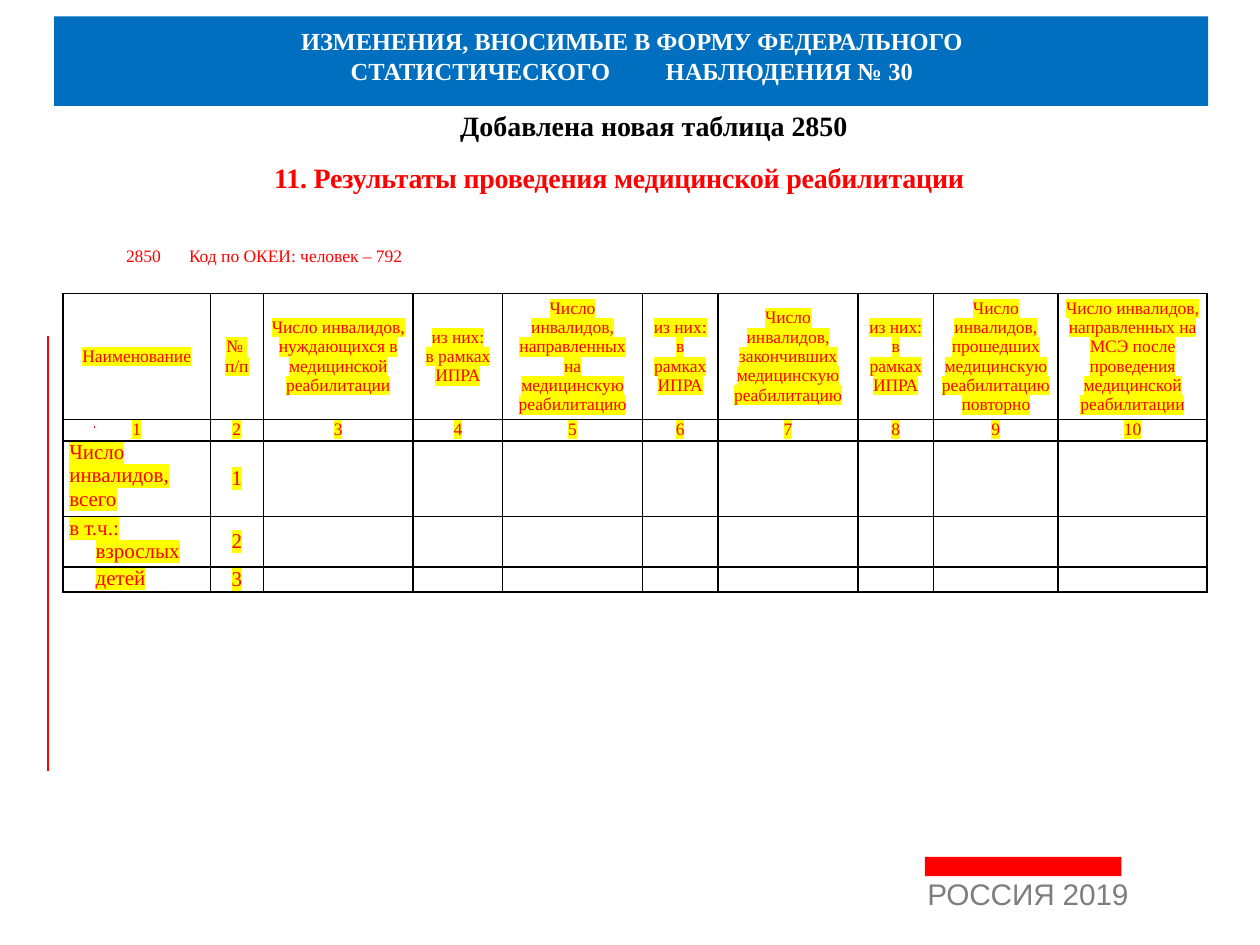
from lxml.etree import SubElement
from pptx import Presentation
from pptx.dml.color import RGBColor
from pptx.enum.shapes import MSO_CONNECTOR, MSO_SHAPE
from pptx.enum.text import MSO_ANCHOR, MSO_AUTO_SIZE, PP_ALIGN
from pptx.oxml.ns import qn
from pptx.util import Inches, Pt

RED, YELLOW, BLUE, WHITE, BLACK, GREY = "FF0000", "FFFF00", "006FC0", "FFFFFF", "000000", "7E7E7E"
SERIF, SANS = "Times New Roman", "Arial"
CENTER, LEFT = PP_ALIGN.CENTER, PP_ALIGN.LEFT


def rgb(hex_color):
    return RGBColor.from_string(hex_color)


def grid(*cells):
    """Convert steps of a 100 x 75 grid over the slide to lengths."""
    return [Inches(cell / 10) for cell in cells]


def write(paragraph, text, size=10, color=RED, font=SERIF, bold=False, align=CENTER, before=0,
          indent=0, tabs=(), spacing=0, line_height=None, highlight=None):
    """Fill one paragraph; indent and tabs are in grid steps."""
    paragraph.alignment, paragraph.space_before = align, Pt(before)
    if line_height:
        paragraph.line_spacing = Pt(line_height)
    properties = paragraph._p.get_or_add_pPr()
    properties.set("marL", str(grid(indent)[0]))
    properties.set("indent", "0")
    if tabs:
        tab_list = SubElement(properties, qn("a:tabLst"))
        for position, side in tabs:
            SubElement(tab_list, qn("a:tab"), pos=str(grid(position)[0]), algn=side)
    run = paragraph.add_run()
    run.text = text
    run.font.size, run.font.bold, run.font.name = Pt(size), bold, font
    run.font.color.rgb = rgb(color)
    run_properties = run._r.get_or_add_rPr()
    if spacing:
        run_properties.set("spc", str(int(spacing * 100)))
    if highlight:
        mark = SubElement(run_properties, qn("a:highlight"))
        SubElement(mark, qn("a:srgbClr"), val=highlight)
        run_properties.find(qn("a:solidFill")).addnext(mark)


class SlideBuilder:
    def __init__(self, presentation):
        self.slide = presentation.slides.add_slide(presentation.slide_layouts[5])
        self.shapes = self.slide.shapes

    def bar(self, place, color):
        band = self.shapes.add_shape(MSO_SHAPE.RECTANGLE, *grid(*place))
        band.shadow.inherit = False
        band.fill.solid()
        band.fill.fore_color.rgb = rgb(color)
        band.line.fill.background()

    def rule(self, x, top, bottom, color=RED, width=0.87):
        mark = self.shapes.add_connector(MSO_CONNECTOR.STRAIGHT, *grid(x, top, x, bottom))
        mark.line.color.rgb, mark.line.width = rgb(color), Pt(width)
        SubElement(mark._element.spPr, qn("a:effectLst"))

    def fill_frame(self, frame, paragraphs, **style):
        for index, (text, own_style) in enumerate(paragraphs):
            paragraph = frame.add_paragraph() if index else frame.paragraphs[0]
            write(paragraph, text, **{**style, **own_style})

    def set_frame(self, frame, paragraphs, style):
        frame.word_wrap, frame.auto_size = True, MSO_AUTO_SIZE.NONE
        frame.vertical_anchor = MSO_ANCHOR.TOP
        frame.margin_left = frame.margin_right = frame.margin_bottom = 0
        frame.margin_top = Inches(0.01)
        self.fill_frame(frame, paragraphs, **style)

    def title(self, place, paragraphs, **style):
        heading = self.shapes.title
        heading.left, heading.top, heading.width, heading.height = grid(*place)
        self.set_frame(heading.text_frame, paragraphs, style)
        # Bring the title in front of its band
        self.shapes._spTree.append(heading._element)

    def text(self, place, paragraphs, **style):
        self.set_frame(self.shapes.add_textbox(*grid(*place)).text_frame, paragraphs, style)

    def cell(self, cell, paragraphs, anchor):
        cell.margin_left = cell.margin_right = Inches(0.05)
        cell.margin_top = cell.margin_bottom = 0
        cell.vertical_anchor = anchor
        properties = cell._tc.get_or_add_tcPr()
        for side in ("lnL", "lnR", "lnT", "lnB"):
            border = SubElement(properties, qn(f"a:{side}"), w=str(Pt(1)))
            SubElement(SubElement(border, qn("a:solidFill")), qn("a:srgbClr"), val=BLACK)
        cell.fill.background()
        if paragraphs:
            self.fill_frame(cell.text_frame, paragraphs, highlight=YELLOW)
        else:
            SubElement(cell.text_frame.paragraphs[0]._p, qn("a:endParaRPr"), sz="1000")

    def table(self, left, top, columns, rows, content):
        frame = self.shapes.add_table(len(rows), len(columns),
                                      *grid(left, top, sum(columns), sum(rows)))
        table = frame.table
        table.first_row = table.horz_banding = False
        for column, width in zip(table.columns, grid(*columns)):
            column.width = width
        for row, height in zip(table.rows, grid(*rows)):
            row.height = height
        for r, row in enumerate(content):
            for c in range(len(columns)):
                at_top = r == 1 or (r > 1 and c == 0)
                self.cell(table.cell(r, c), row[c] if c < len(row) else None,
                          MSO_ANCHOR.TOP if at_top else MSO_ANCHOR.MIDDLE)


def lines(text, **style):
    return [(line, style) for line in text.split("|")]


def main():
    presentation = Presentation()
    presentation.slide_width, presentation.slide_height = grid(100, 75)
    page = SlideBuilder(presentation)

    # Footer and revision marks
    page.bar((73.4, 68, 15.6, 1.55), RED)
    page.rule(7.5, 33.8, 34)
    page.rule(7.5, 41.8, 42)
    page.rule(3.8, 26.7, 61.2)

    # Title band
    page.bar((4.3, 1.3, 91.6, 7.1), BLUE)
    page.title((20.2, 2, 59.9, 4.8), [
        ("ИЗМЕНЕНИЯ, ВНОСИМЫЕ В ФОРМУ ФЕДЕРАЛЬНОГО", {"before": 0.9, "spacing": -0.1}),
        ("СТАТИСТИЧЕСКОГО\tНАБЛЮДЕНИЯ № 30", {"tabs": [(24.2, "l")]}),
    ], size=14, color=WHITE, bold=True)
    page.text((73.6, 69.5, 16.4, 2.9), [("РОССИЯ 2019", {})],
              size=17, color=GREY, font=SANS, align=LEFT, line_height=19.9, spacing=-0.1)

    # Table heading, number and unit code
    heading = {"size": 16, "bold": True}
    page.text((5, 8.5, 88.2, 13), [
        ("Добавлена новая таблица 2850", {**heading, "color": BLACK, "indent": 5.6, "before": 0.9}),
        ("11. Результаты проведения медицинской реабилитации",
         {**heading, "indent": 0.1, "before": 10.6, "spacing": -0.1}),
        ("\t2850\tКод по ОКЕИ: человек – 792",
         {"align": LEFT, "before": 29, "tabs": [(3.7, "l"), (88.1, "r")]}),
    ])

    # Rehabilitation table
    within_plan = "из них:|в рамках|ИПРА"
    headers = [
        "Наименование",
        "№ |п/п",
        "Число инвалидов,|нуждающихся в медицинской|реабилитации",
        within_plan,
        "Число инвалидов,|направленных на|медицинскую реабилитацию",
        within_plan,
        "Число инвалидов,|закончивших|медицинскую реабилитацию",
        within_plan,
        "Число инвалидов,|прошедших|медицинскую реабилитацию|повторно",
        "Число инвалидов,|направленных на МСЭ после|проведения|медицинской реабилитации",
    ]
    row_label = {"size": 12, "align": LEFT}
    sub_label = {**row_label, "indent": 2.1}
    row_labels = [
        lines("Число инвалидов,|всего", **row_label),
        lines("в т.ч.:", **row_label) + lines("взрослых", **sub_label),
        lines("детей", **sub_label),
    ]
    content = [[lines(header) for header in headers],
               [lines(str(number)) for number in range(1, len(headers) + 1)]]
    content += [[label, lines(str(number), size=12)] for number, label in enumerate(row_labels, 1)]
    page.table(5, 23.3, [11.7, 4.2, 11.9, 7.1, 11.1, 6, 11.1, 6, 9.9, 11.8],
               [10, 1.7, 6, 4, 2], content)

    presentation.save("out.pptx")


if __name__ == "__main__":
    main()
